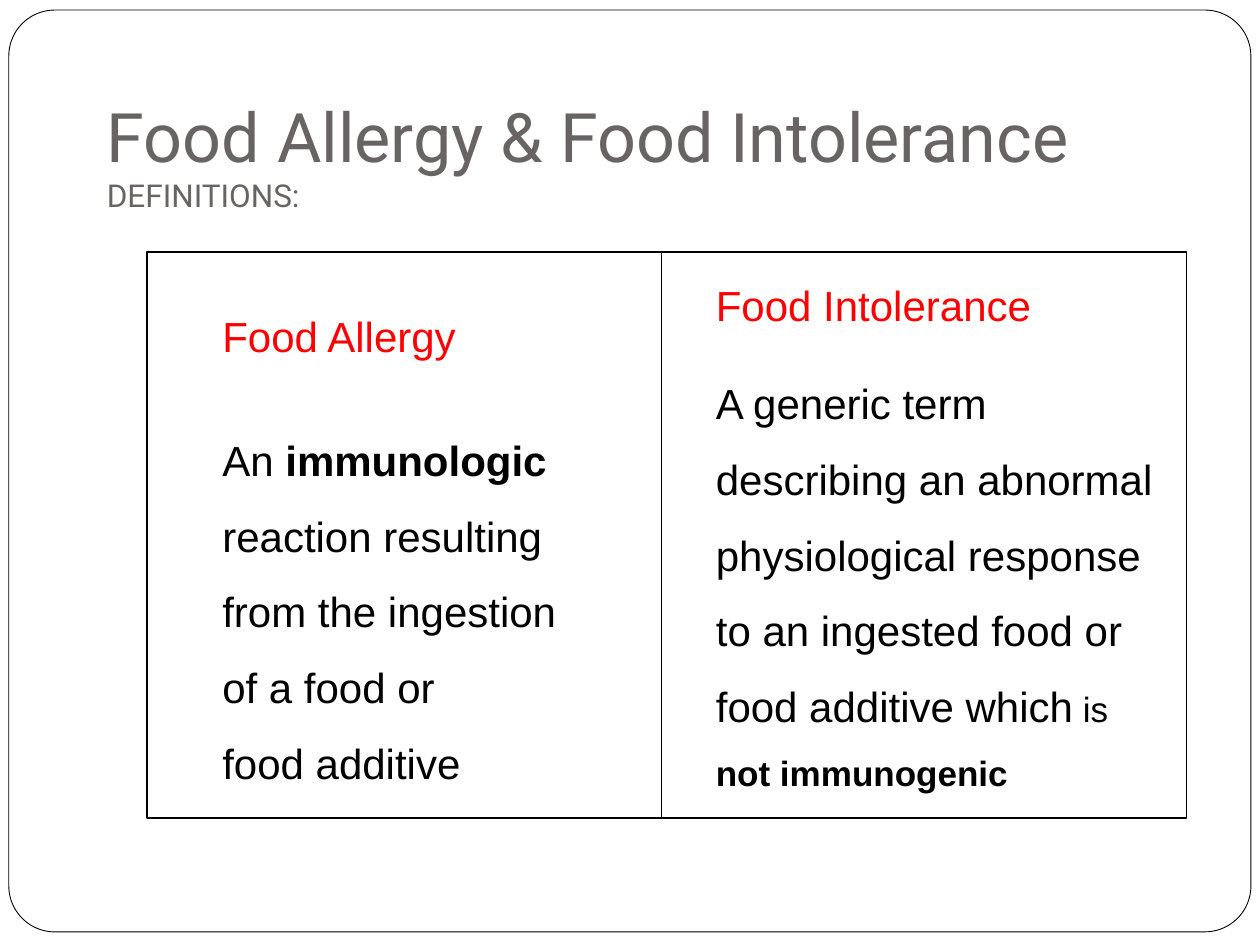
import pptx
import pptx.dml.color
import pptx.enum.shapes
import pptx.enum.text
import pptx.util

# Grid: 120 columns by 90 rows on a 10 x 7.5 inch slide
COLUMNS, ROWS = 120, 90
WIDTH, HEIGHT = pptx.util.Inches(10), pptx.util.Inches(7.5)

BLACK, WHITE, RED, GREY = "000000", "FFFFFF", "FF0000", "696464"
BODY_SIZE = 24
HEADING_GAP = 27.6  # one line of body text


def color(hex_code):
    return pptx.dml.color.RGBColor.from_string(hex_code)


def place(column, row, columns, rows):
    """Turn grid units into left, top, width and height."""
    return (round(WIDTH * column / COLUMNS), round(HEIGHT * row / ROWS),
            round(WIDTH * columns / COLUMNS), round(HEIGHT * rows / ROWS))


def add_box(slide, kind, area, line_width, fill=None):
    shape = slide.shapes.add_shape(kind, *place(*area))
    shape.shadow.inherit = False
    if fill:
        shape.fill.solid()
        shape.fill.fore_color.rgb = color(fill)
    else:
        shape.fill.background()
    shape.line.color.rgb = color(BLACK)
    shape.line.width = pptx.util.Pt(line_width)
    return shape


def add_text(paragraph, text, size=BODY_SIZE, font="Arial", hex_code=BLACK, bold=False):
    run = paragraph.add_run()
    run.text = text
    run.font.size = pptx.util.Pt(size)
    run.font.name = font
    run.font.bold = bold
    run.font.color.rgb = color(hex_code)


def add_title(slide, area, title, subtitle):
    frame = slide.shapes.add_textbox(*place(*area)).text_frame
    frame.word_wrap = True
    frame.vertical_anchor = pptx.enum.text.MSO_ANCHOR.BOTTOM
    paragraph = frame.paragraphs[0]
    add_text(paragraph, title, size=39, font="Roboto", hex_code=GREY)
    paragraph.add_line_break()
    add_text(paragraph, subtitle, size=18, font="Roboto", hex_code=GREY)


def add_definition(slide, area, heading, lines, first_spacing):
    """Each line is a list of (text, format) pairs."""
    frame = slide.shapes.add_textbox(*place(*area)).text_frame
    frame.word_wrap = False
    frame.auto_size = pptx.enum.text.MSO_AUTO_SIZE.SHAPE_TO_FIT_TEXT
    add_text(frame.paragraphs[0], heading, hex_code=RED)
    for index, line in enumerate(lines):
        paragraph = frame.add_paragraph()
        paragraph.line_spacing = 1.5 if index else first_spacing
        if index == 0:
            paragraph.space_before = pptx.util.Pt(HEADING_GAP)
        for text, text_format in line:
            add_text(paragraph, text, **text_format)


def main():
    presentation = pptx.Presentation()
    presentation.slide_width, presentation.slide_height = WIDTH, HEIGHT
    slide = presentation.slides.add_slide(presentation.slide_layouts[6])
    shapes = pptx.enum.shapes.MSO_SHAPE

    # Slide frame and title
    frame = add_box(slide, shapes.ROUNDED_RECTANGLE, (0.84, 0.96, 118.3, 87.8), 0.5, WHITE)
    frame.adjustments[0] = 0.05
    add_title(slide, (9, 6, 102, 15), "Food Allergy & Food Intolerance", "DEFINITIONS:")

    # Two adjoining panels
    edges = (14, 63, 113)
    for left, right in zip(edges, edges[1:]):
        add_box(slide, shapes.RECTANGLE, (left, 24, right - left, 53.9), 1)

    # Definitions
    add_definition(slide, (20, 29, 35.3, 46.7), "Food Allergy", [
        [("An ", {}), ("immunologic", {"bold": True})],
        [("reaction resulting", {})],
        [("from the ingestion", {})],
        [("of a food or", {})],
        [("food additive", {})],
    ], first_spacing=1.5)
    add_definition(slide, (67, 26, 45.1, 50.3), "Food Intolerance", [
        [("A generic term", {})],
        [("describing an abnormal", {})],
        [("physiological response", {})],
        [("to an ingested food or", {})],
        [("food additive which", {}), (" is", {"size": 20})],
        [("not immunogenic", {"size": 20, "bold": True})],
    ], first_spacing=1.0)

    presentation.save("out.pptx")


if __name__ == "__main__":
    main()
